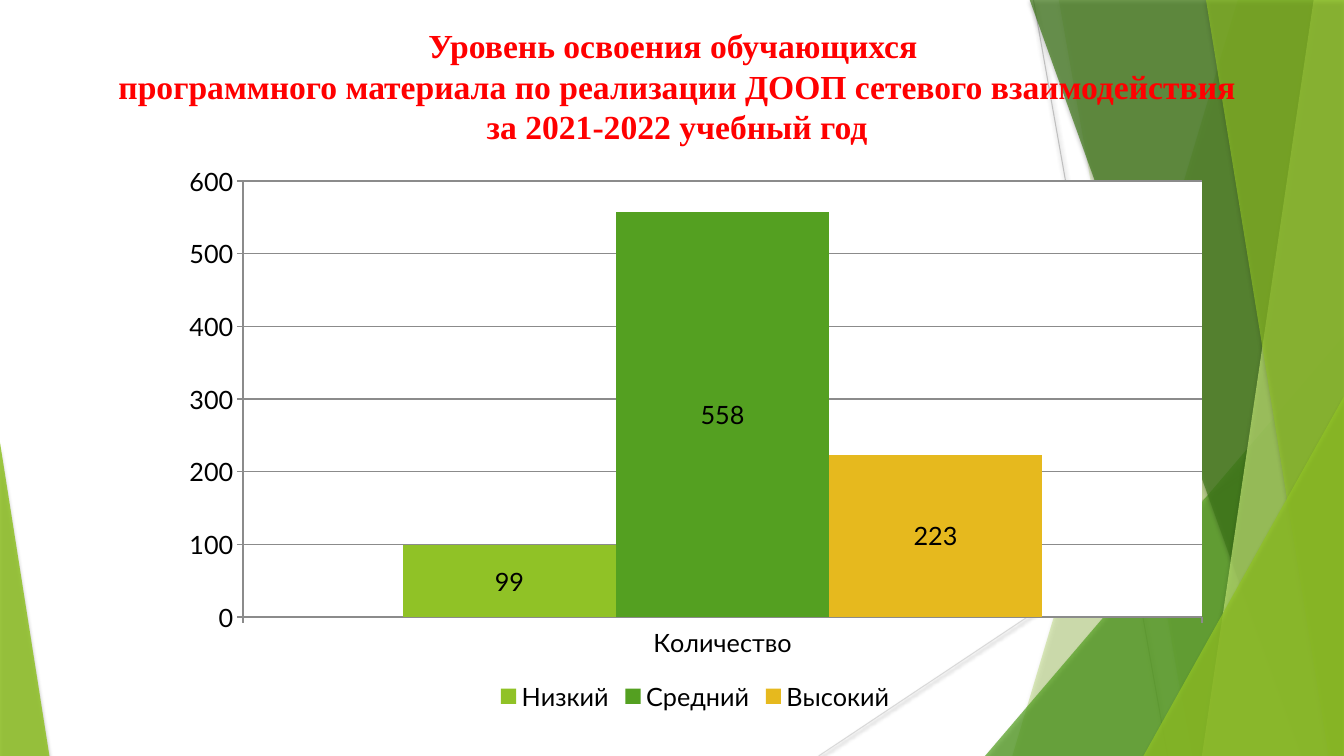
from lxml import etree
from pptx import Presentation
from pptx.chart.data import CategoryChartData
from pptx.dml.color import RGBColor
from pptx.enum.chart import XL_CHART_TYPE, XL_LABEL_POSITION, XL_LEGEND_POSITION, XL_TICK_MARK
from pptx.enum.shapes import MSO_CONNECTOR, MSO_SHAPE
from pptx.enum.text import PP_ALIGN
from pptx.oxml import parse_xml
from pptx.oxml.ns import nsdecls, qn
from pptx.util import Inches, Pt

COLUMNS = XL_CHART_TYPE.COLUMN_CLUSTERED
LABEL_CENTER = XL_LABEL_POSITION.CENTER
LEGEND_BOTTOM = XL_LEGEND_POSITION.BOTTOM
TICK_OUTSIDE = XL_TICK_MARK.OUTSIDE
STRAIGHT = MSO_CONNECTOR.STRAIGHT
TRIANGLE = MSO_SHAPE.ISOSCELES_TRIANGLE
CENTER = PP_ALIGN.CENTER

WIDTH, HEIGHT, TOP = 13.33, 7.5, -0.01

THEME = {
    "title_font": "Times New Roman", "title_size": 24, "title_color": "FF0000",
    "chart_font": "Lato", "chart_size": 18, "chart_color": "000000",
    "axis": "8B8B8B", "plot": "FFFFFF", "shadow": "000000",
    "lime": "90C226", "green": "54A021", "dark": "3F7819",
    "pale": "C0E474", "gold": "E6B91E",
    "line": "BFBFBF", "light_line": "D9D9D9",
}

TITLE = [
    "Уровень освоения обучающихся ",
    "программного материала по реализации ДООП сетевого взаимодействия",
    " за 2021-2022 учебный год ",
]
CATEGORIES = ["Количество"]
LEVELS = [("Низкий", 99, "lime"), ("Средний", 558, "green"), ("Высокий", 223, "gold")]

# start, end, color
THIN_LINES = [
    ((10.25, 0), (11.58, HEIGHT), "line"),
    ((WIDTH, 4.03), (8.12, HEIGHT), "light_line"),
]
# Back to front. A band has the left x of its top and bottom edges and reaches
# the right side of the slide; a triangle has its box and the x of its apex.
FACETS = [
    ("band", (12.28, 10.04), "lime", 30),
    ("band", (10.5, 11.82), "lime", 20),
    ("triangle", (9.77, 3.33, 3.56, 4.17, 1), "green", 72),
    ("band", (10.21, 12.91), "dark", 70),
    ("band", (13.03, 11.92), "pale", 70),
    ("band", (11.96, 13.18), "lime", 65),
    ("triangle", (11.34, 3.93, 1.99, 3.57, 1), "lime", 80),
    ("triangle", (0, 4.39, 0.49, 3.11, 0), "lime", 85),
]
TITLE_BOX = (0.97, 0.2, 11.49, 1.3)
CHART_BOX = (1.67, 1.53, 10.45, 5.58)
PLOT_LAYOUT = {"x": 0.071, "y": 0.048, "w": 0.91, "h": 0.775}  # shares of the chart


def color(name):
    return RGBColor.from_string(THEME[name])


def inches(values):
    return [Inches(value) for value in values]


def add_shadow(shape, alpha, blur, distance):
    """Give the shape a soft shadow that falls straight down."""
    shape._element.spPr.append(parse_xml(
        f'<a:effectLst {nsdecls("a")}><a:outerShdw blurRad="{Pt(blur)}" '
        f'dist="{Pt(distance)}" dir="5400000" algn="ctr" rotWithShape="0">'
        f'<a:srgbClr val="{THEME["shadow"]}"><a:alpha val="{alpha * 1000}"/>'
        f'</a:srgbClr></a:outerShdw></a:effectLst>'))


def add_thin_line(slide, start, end, color_name):
    connector = slide.shapes.add_connector(STRAIGHT, *inches(start + end))
    connector.line.color.rgb = color(color_name)
    connector.line.width = Pt(0.75)
    add_shadow(connector, 38, 3.1, 1.6)


def add_facet(slide, kind, geometry, color_name, alpha):
    """Add one translucent panel of the background."""
    if kind == "band":
        top_x, bottom_x = geometry
        corners = [(WIDTH, TOP), (WIDTH, HEIGHT), (bottom_x, HEIGHT)]
        builder = slide.shapes.build_freeform(Inches(top_x), Inches(TOP))
        builder.add_line_segments([inches(corner) for corner in corners], close=True)
        shape = builder.convert_to_shape()
    else:
        *box, apex = geometry
        shape = slide.shapes.add_shape(TRIANGLE, *inches(box))
        shape.adjustments[0] = apex
    shape.fill.solid()
    shape.fill.fore_color.rgb = color(color_name)
    fill_color = shape._element.spPr.find(qn("a:solidFill"))[0]
    etree.SubElement(fill_color, qn("a:alpha")).set("val", str(alpha * 1000))
    shape.line.fill.background()
    add_shadow(shape, 35, 3, 2)


def add_title(slide):
    frame = slide.shapes.add_textbox(*inches(TITLE_BOX)).text_frame
    frame.word_wrap = True
    frame.text = "\n".join(TITLE)
    for paragraph in frame.paragraphs:
        paragraph.alignment = CENTER
        paragraph.font.name = THEME["title_font"]
        paragraph.font.size = Pt(THEME["title_size"])
        paragraph.font.bold = True
        paragraph.font.color.rgb = color("title_color")


def style_line(line):
    line.color.rgb = color("axis")
    line.width = Pt(1)


def style_plot_area(chart):
    """Fix the inner plot position and give it a plain fill."""
    plot_area = chart._chartSpace.chart.plotArea
    for layout in plot_area.findall(qn("c:layout")):
        plot_area.remove(layout)
    modes = "".join(f'<c:{side}Mode val="edge"/>' for side in "xy")
    sizes = "".join(f'<c:{side} val="{share}"/>' for side, share in PLOT_LAYOUT.items())
    plot_area.insert(0, parse_xml(
        f'<c:layout {nsdecls("c")}><c:manualLayout><c:layoutTarget val="inner"/>'
        f'{modes}{sizes}</c:manualLayout></c:layout>'))
    plot_area.append(parse_xml(
        f'<c:spPr {nsdecls("c", "a")}><a:solidFill><a:srgbClr val="{THEME["plot"]}"/>'
        f'</a:solidFill></c:spPr>'))


def add_level_chart(slide):
    data = CategoryChartData()
    data.categories = CATEGORIES
    for name, value, _ in LEVELS:
        data.add_series(name, [value])
    chart = slide.shapes.add_chart(COLUMNS, *inches(CHART_BOX), data).chart
    chart.has_title = False
    chart.font.name = THEME["chart_font"]
    chart.font.size = Pt(THEME["chart_size"])
    chart.font.color.rgb = color("chart_color")

    chart.has_legend = True
    chart.legend.position = LEGEND_BOTTOM
    chart.legend.include_in_layout = False

    value_axis = chart.value_axis
    value_axis.minimum_scale, value_axis.maximum_scale = 0, 600
    value_axis.major_unit = 100
    value_axis.has_major_gridlines = True
    style_line(value_axis.major_gridlines.format.line)
    for axis in (chart.category_axis, value_axis):
        axis.major_tick_mark = TICK_OUTSIDE
        style_line(axis.format.line)

    plot = chart.plots[0]
    plot.vary_by_categories = False
    plot.gap_width, plot.overlap = 150, 0
    for series, (_, _, color_name) in zip(plot.series, LEVELS):
        series.format.fill.solid()
        series.format.fill.fore_color.rgb = color(color_name)
        labels = series.data_labels
        labels.show_value = True
        labels.position = LABEL_CENTER
        labels.font.name = THEME["chart_font"]
        labels.font.size = Pt(THEME["chart_size"])
        labels.font.color.rgb = color("chart_color")
    style_plot_area(chart)


def main():
    presentation = Presentation()
    presentation.slide_width, presentation.slide_height = inches((WIDTH, HEIGHT))
    slide = presentation.slides.add_slide(presentation.slide_layouts[6])
    for thin_line in THIN_LINES:
        add_thin_line(slide, *thin_line)
    for facet in FACETS:
        add_facet(slide, *facet)
    add_title(slide)
    add_level_chart(slide)
    presentation.save("out.pptx")


if __name__ == "__main__":
    main()
